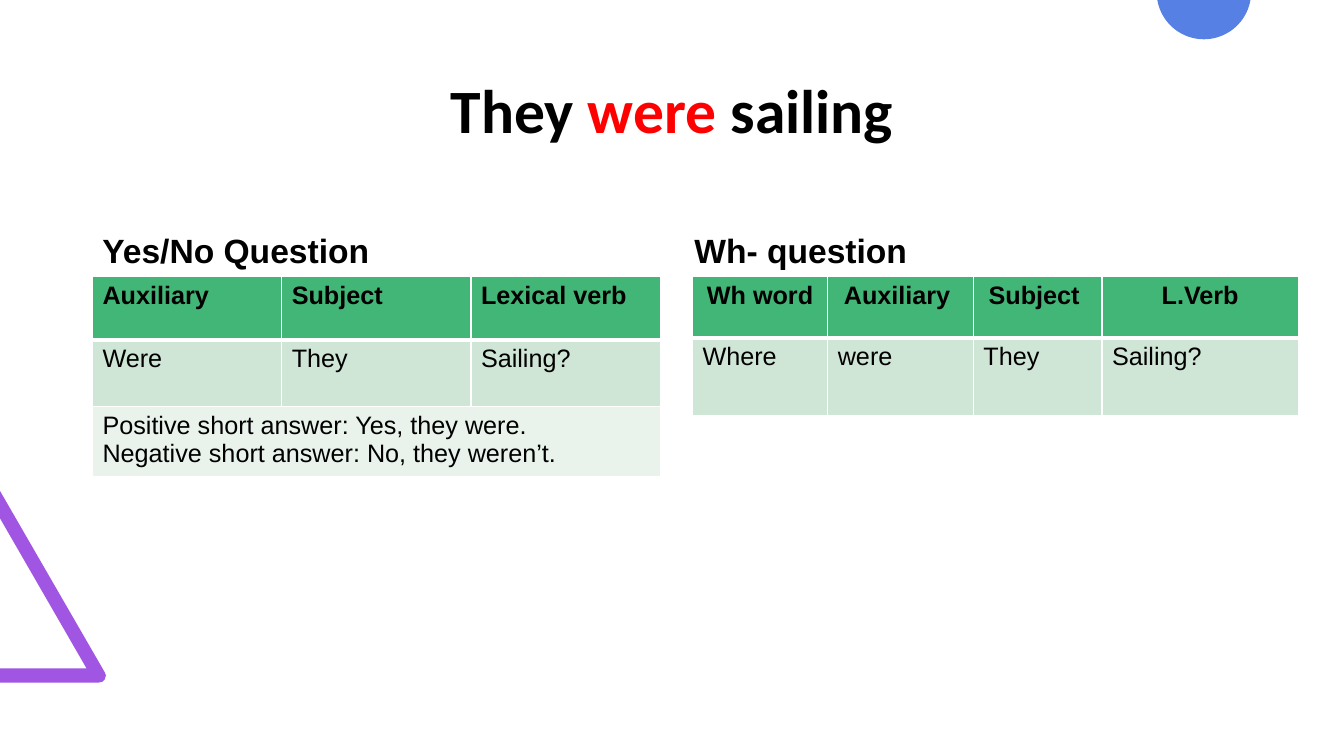
from math import cos, pi, sin

from lxml.etree import SubElement
from pptx import Presentation
from pptx.dml.color import RGBColor
from pptx.enum.text import MSO_ANCHOR, PP_ALIGN
from pptx.oxml.ns import qn
from pptx.util import Cm, Pt

BLACK = RGBColor(0x00, 0x00, 0x00)
RED = RGBColor(0xFF, 0x00, 0x00)
WHITE = RGBColor(0xFF, 0xFF, 0xFF)
BLUE = RGBColor(0x56, 0x80, 0xE3)
PURPLE = RGBColor(0xA1, 0x56, 0xE3)
GREEN = RGBColor(0x42, 0xB6, 0x76)
MINT = RGBColor(0xCF, 0xE5, 0xD6)
PALE = RGBColor(0xE9, 0xF3, 0xEC)
FILLS = [GREEN, MINT, PALE]


def write(frame, *lines, size=18, font="Arial", bold=False,
          align=PP_ALIGN.LEFT, space=None, before=None):
    for i, line in enumerate(lines):
        para = frame.paragraphs[0] if i == 0 else frame.add_paragraph()
        para.alignment = align
        para.line_spacing = space
        para.space_before = before
        for text, color in [(line, BLACK)] if isinstance(line, str) else line:
            run = para.add_run()
            run.text = text
            run.font.size = Pt(size)
            run.font.name = font
            run.font.bold = bold
            run.font.color.rgb = color


def draw(slide, points, color):
    spots = [(Cm(x), Cm(y)) for x, y in points]
    outline = slide.shapes.build_freeform(*spots[0])
    outline.add_line_segments(spots[1:])
    shape = outline.convert_to_shape()
    shape.shadow.inherit = False
    shape.fill.solid()
    shape.fill.fore_color.rgb = color
    shape.line.fill.background()


def label(slide, text, left):
    box = slide.shapes.add_textbox(Cm(left), Cm(4.67), Cm(14.35), Cm(2.29))
    frame = box.text_frame
    frame.word_wrap = True
    frame.vertical_anchor = MSO_ANCHOR.BOTTOM
    write(frame, text, size=24, bold=True, space=0.9, before=Pt(10))


def border(cell, row):
    props = cell._tc.get_or_add_tcPr()
    widths = {"lnL": 1, "lnR": 1, "lnT": 3 if row == 1 else 1,
              "lnB": 3 if row == 0 else 1}
    for side, width in widths.items():
        line = SubElement(props, qn(f"a:{side}"), w=str(Pt(width)))
        fill = SubElement(line, qn("a:solidFill"))
        SubElement(fill, qn("a:srgbClr"), val=str(WHITE))


def grid(slide, rows, left, widths, heights, align):
    frame = slide.shapes.add_table(
        len(rows), len(widths), Cm(left), Cm(6.96),
        Cm(sum(widths)), Cm(sum(heights)))
    table = frame.table
    for col, width in zip(table.columns, widths):
        col.width = Cm(width)
    for r, (texts, height) in enumerate(zip(rows, heights)):
        table.rows[r].height = Cm(height)
        for c in range(len(widths)):
            cell = table.cell(r, c)
            border(cell, r)
            cell.fill.solid()
            cell.fill.fore_color.rgb = FILLS[r]
        for c, text in enumerate(texts):
            write(table.cell(r, c).text_frame, *text.split("\n"),
                  bold=r == 0, align=align if r == 0 else PP_ALIGN.LEFT)
    return table


def main():
    deck = Presentation()
    deck.slide_width, deck.slide_height = Cm(33.87), Cm(19.05)
    slide = deck.slides.add_slide(deck.slide_layouts[5])

    draw(slide, [(0, 17.2), (0, 16.84), (2.18, 16.84), (0, 13.06),
                 (0, 12.37), (2.64, 16.94), (2.67, 17.02), (2.64, 17.12),
                 (2.58, 17.18), (2.49, 17.2)], PURPLE)
    start, steps = 0.17, 40
    turns = [start + (pi - 2 * start) * i / steps for i in range(steps + 1)]
    draw(slide, [(30.34 + 1.19 * cos(t), 1.19 * sin(t) - 0.2)
                 for t in turns], BLUE)

    title = slide.shapes.title
    title.left, title.top = Cm(2.33), Cm(1.01)
    title.width, title.height = Cm(29.21), Cm(3.68)
    title.text_frame.vertical_anchor = MSO_ANCHOR.MIDDLE
    write(title.text_frame,
          [("They ", BLACK), ("were", RED), (" sailing", BLACK)],
          size=44, font="Calibri", bold=True, align=PP_ALIGN.CENTER, space=0.9)

    label(slide, "Yes/No Question", 2.33)
    answers = grid(slide, [
        ["Auxiliary ", "Subject ", "Lexical verb"],
        ["Were", "They", "Sailing?"],
        ["Positive short answer: Yes, they were.\n"
         "Negative short answer: No, they weren’t."],
    ], 2.33, [4.77] * 3, [1.6, 1.68, 1.7], PP_ALIGN.LEFT)
    answers.cell(2, 0).merge(answers.cell(2, 2))

    label(slide, "Wh- question", 17.25)
    grid(slide, [
        ["Wh word", "Auxiliary ", "Subject ", "L.Verb"],
        ["Where", "were", "They", "Sailing?"],
    ], 17.45, [3.41, 3.67, 3.24, 4.95], [1.55, 1.96], PP_ALIGN.CENTER)

    deck.save("out.pptx")


if __name__ == "__main__":
    main()
